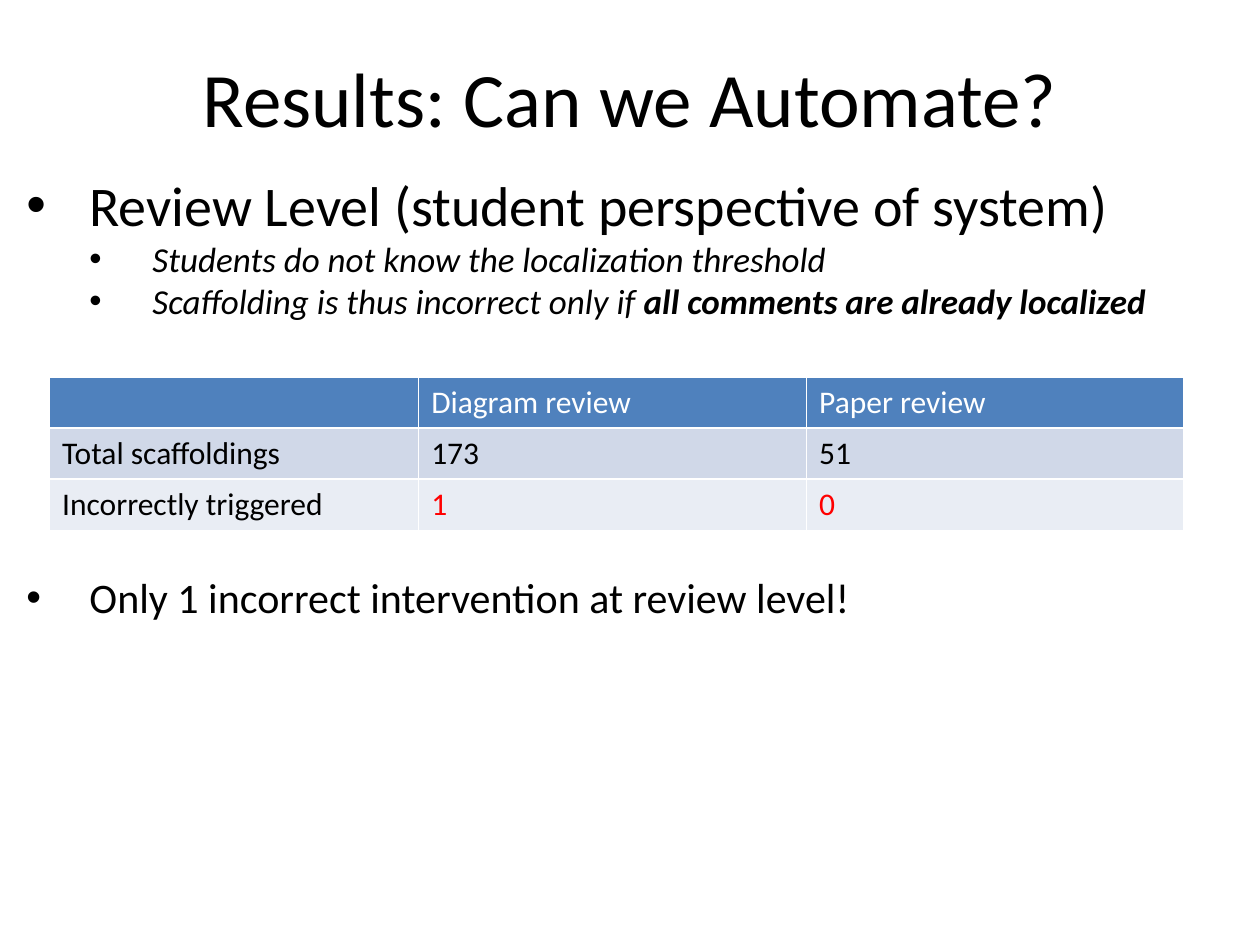
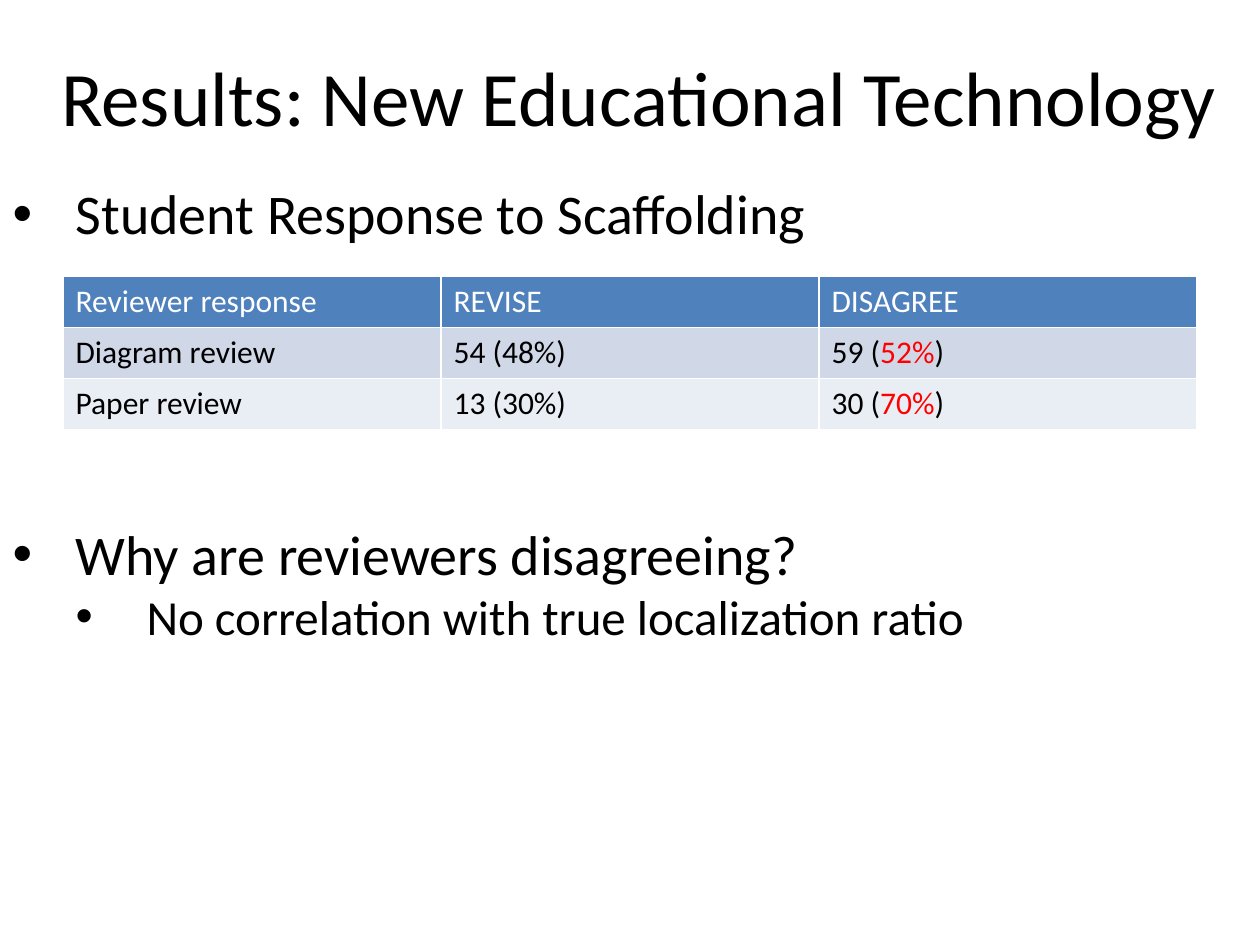
"""Build two results slides, each with a title, a bullet list and a table."""
from lxml import etree
from pptx import Presentation
from pptx.dml.color import RGBColor
from pptx.enum.text import MSO_AUTO_SIZE
from pptx.oxml.ns import qn
from pptx.util import Cm, Pt

NO_FIT = MSO_AUTO_SIZE.NONE
BLACK = RGBColor(0x00, 0x00, 0x00)
WHITE = RGBColor(0xFF, 0xFF, 0xFF)
RED = RGBColor(0xFF, 0x00, 0x00)
BLUE = RGBColor(0x4F, 0x81, 0xBD)
BANDS = [RGBColor(0xD0, 0xD8, 0xE8), RGBColor(0xE9, 0xED, 0xF4)]
FONT = "Calibri"
HANG = 1.27
ROW = 1.03

# Text between asterisks is stressed: bold in lists, red in tables.
SLIDES = [
    {
        "title": "Results: Can we Automate?",
        "title_box": (1.27, 0.36, 22.86, 3.18),
        "body_box": (0.28, 3.3, 25.12, 12.07),
        "items": [
            {"text": "Review Level (student perspective of system)", "size": 32},
            {"text": "Students do not know the localization threshold",
             "size": 20, "level": 1, "italic": True},
            {"text": "Scaffolding is thus incorrect only if "
                     "*all comments are already localized*",
             "size": 20, "level": 1, "italic": True},
            {"text": "Only 1 incorrect intervention at review level!",
             "size": 24, "gap": 143},
        ],
        "table_at": (1.0, 7.6),
        "cols": (7.44, 7.82, 7.6),
        "rows": [
            ("", "Diagram review", "Paper review"),
            ("Total scaffoldings", "173", "51"),
            ("Incorrectly triggered", "*1*", "*0*"),
        ],
    },
    {
        "title": "Results: New Educational Technology",
        "title_box": (0.53, 0.33, 24.71, 3.18),
        "body_box": (0, 3.48, 24.82, 9.83),
        "items": [
            {"text": "Student Response to Scaffolding", "size": 32},
            {"text": "Why are reviewers disagreeing?", "size": 32, "gap": 156},
            {"text": "No correlation with true localization ratio",
             "size": 28, "level": 1, "hang": 1.43},
        ],
        "table_at": (1.27, 5.57),
        "cols": (7.62, 7.62, 7.62),
        "rows": [
            ("Reviewer response", "REVISE", "DISAGREE"),
            ("Diagram review", "54 (48%)", "59 (*52%*)"),
            ("Paper review", "13 (30%)", "30 (*70%*)"),
        ],
    },
]


def place(shape, box):
    shape.left, shape.top, shape.width, shape.height = map(Cm, box)


def write(para, text, size, color=BLACK, stress=BLACK, bold=False, italic=None):
    for num, part in enumerate(text.split("*")):
        if part:
            run = para.add_run()
            run.text = part
            font = run.font
            font.name, font.size, font.italic = FONT, Pt(size), italic
            font.bold = bold and num % 2 == 1
            font.color.rgb = stress if num % 2 else color


def set_bullet(para, level, hang):
    props = para._p.get_or_add_pPr()
    props.set("marL", str(Cm(level * HANG + hang)))
    props.set("indent", str(-Cm(hang)))
    etree.SubElement(props, qn("a:buFont")).set("typeface", "Arial")
    etree.SubElement(props, qn("a:buChar")).set("char", "•")


def add_title(slide, text, box):
    title = slide.shapes.title
    place(title, box)
    frame = title.text_frame
    frame.auto_size = NO_FIT
    write(frame.paragraphs[0], text, 44)


def add_list(slide, items, box):
    body = slide.placeholders[1]
    place(body, box)
    frame = body.text_frame
    frame.auto_size = NO_FIT
    for num, item in enumerate(items):
        para = frame.add_paragraph() if num else frame.paragraphs[0]
        para.level = item.get("level", 0)
        para.space_before = Pt(item.get("gap", 0))
        set_bullet(para, para.level, item.get("hang", HANG))
        write(para, item["text"], item["size"], bold=True, italic=item.get("italic"))


def add_grid(slide, rows, cols, spot):
    box = (*spot, sum(cols), ROW * len(rows))
    table = slide.shapes.add_table(len(rows), len(cols), *map(Cm, box)).table
    for col, width in zip(table.columns, cols):
        col.width = Cm(width)
    for r, row in enumerate(rows):
        table.rows[r].height = Cm(ROW)
        for c, text in enumerate(row):
            cell = table.cell(r, c)
            cell.fill.solid()
            cell.fill.fore_color.rgb = BANDS[(r - 1) % 2] if r else BLUE
            para = cell.text_frame.paragraphs[0]
            write(para, text, 18, BLACK if r else WHITE, RED)


def main():
    deck = Presentation()
    deck.slide_width, deck.slide_height = Cm(25.4), Cm(19.05)
    for data in SLIDES:
        slide = deck.slides.add_slide(deck.slide_layouts[1])
        add_title(slide, data["title"], data["title_box"])
        add_list(slide, data["items"], data["body_box"])
        add_grid(slide, data["rows"], data["cols"], data["table_at"])
    deck.save("out.pptx")


if __name__ == "__main__":
    main()
